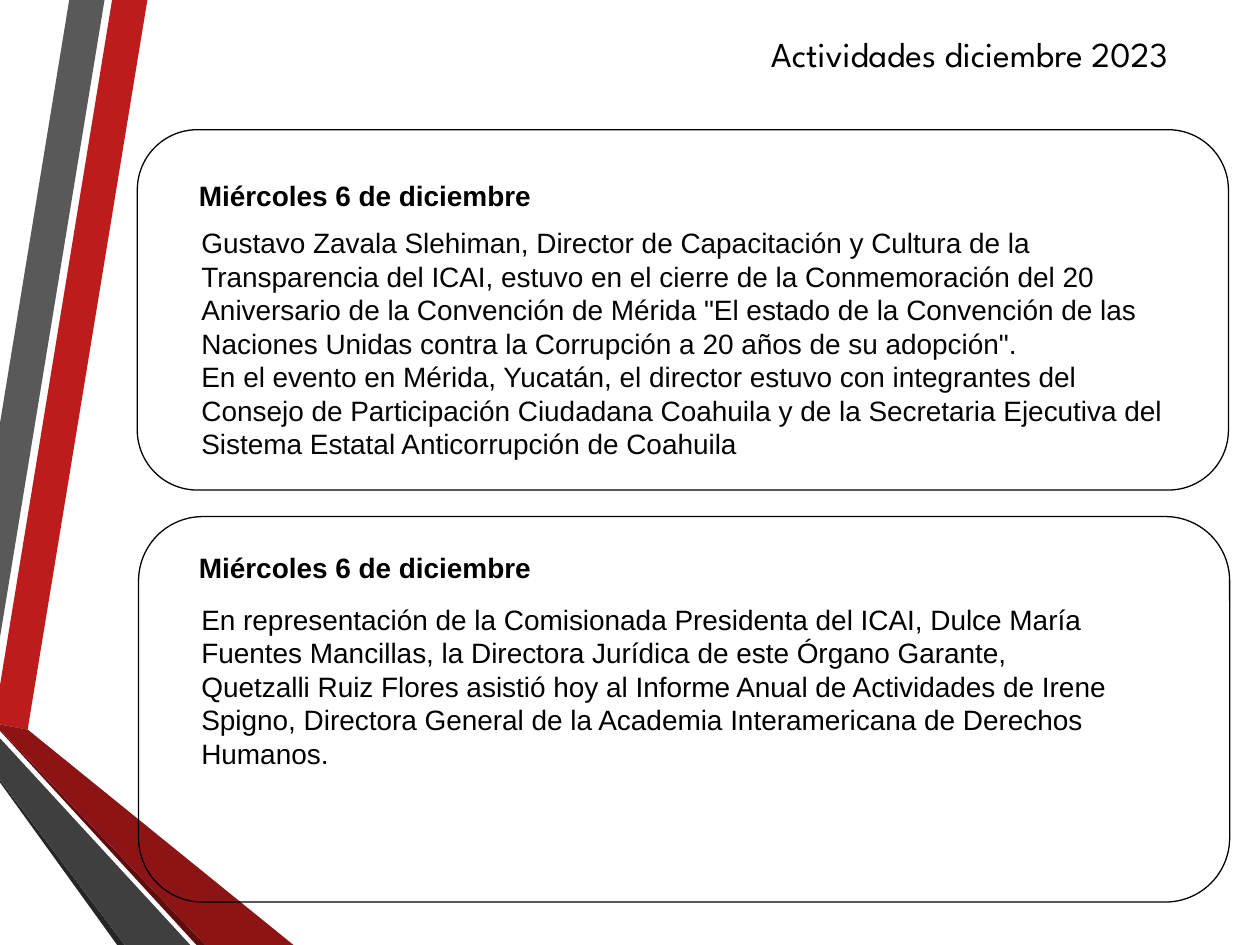
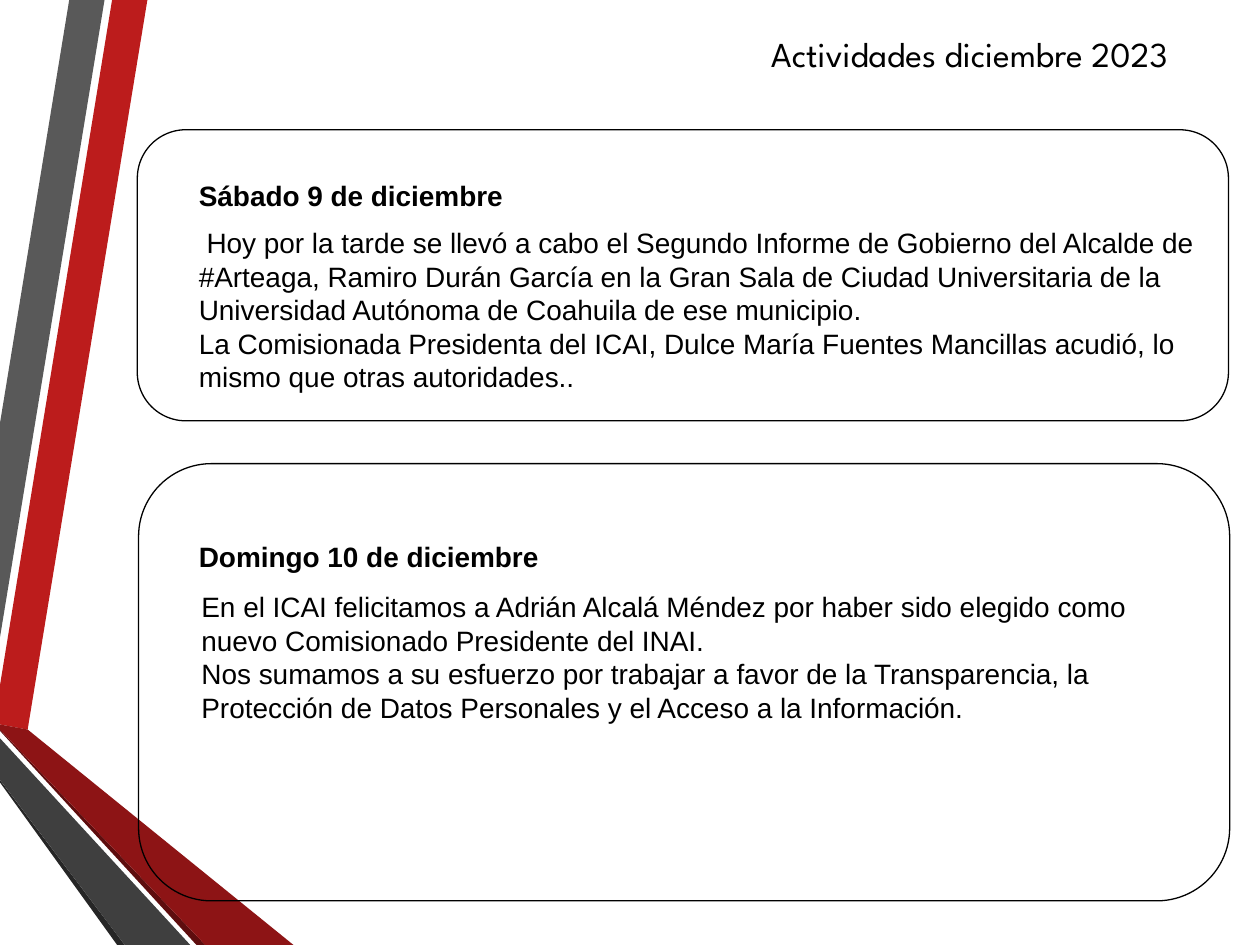
from pptx import Presentation
from pptx.dml.color import RGBColor
from pptx.enum.shapes import MSO_SHAPE as Shape
from pptx.enum.text import MSO_AUTO_SIZE as Auto, PP_ALIGN as Align
from pptx.util import Pt

PX = 9144  # EMU per px, 100 px to the inch
WIDE, HIGH = 1000, 750
BLACK = "000000"
LEFT = 148

BANDS = [
    ("BC1C1C", [(0, 544), (0, 575), (22, 579), (117, 0), (89, 0)]),
    ("595959", [(83, 0), (55, 0), (0, 336), (0, 506)]),
    ("262626", [(0, 619), (0, 621), (93, HIGH), (99, HIGH)]),
    ("5E0D0E", [(0, 579), (0, 580), (156, HIGH), (163, HIGH)]),
    ("8D1415", [(0, 579), (163, HIGH), (233, HIGH), (22, 579), (0, 575)]),
    ("3F3F3F", [(0, 619), (99, HIGH), (151, HIGH), (0, 586)]),
]

# Each card: frame (left, top, height), heading (text, top, height),
# body (left, top, width, height), body colour, paragraphs
PAGES = [
    [
        ((109, 103, 286), ("Miércoles 6 de diciembre", 137, 37),
         (150, 174, 788, 199), "050505", [
            "Gustavo Zavala Slehiman, Director de Capacitación y Cultura de la "
            "Transparencia del ICAI, estuvo en el cierre de la Conmemoración del 20 "
            "Aniversario de la Convención de Mérida \"El estado de la Convención de "
            "las Naciones Unidas contra la Corrupción a 20 años de su adopción\".",
            "En el evento en Mérida, Yucatán, el director estuvo con integrantes del "
            "Consejo de Participación Ciudadana Coahuila y de la Secretaria Ejecutiva "
            "del Sistema Estatal Anticorrupción de Coahuila"]),
        ((110, 410, 306), ("Miércoles 6 de diciembre", 432, 64),
         (150, 473, 740, 145), BLACK, [
            "En representación de la Comisionada Presidenta del ICAI, Dulce María "
            "Fuentes Mancillas, la Directora Jurídica de este Órgano Garante, "
            "Quetzalli Ruiz Flores asistió hoy al Informe Anual de Actividades de "
            "Irene Spigno, Directora General de la Academia Interamericana de "
            "Derechos Humanos."]),
    ],
    [
        ((109, 103, 231), ("Sábado 9 de diciembre", 137, 37),
         (148, 174, 824, 145), BLACK, [
            " Hoy por la tarde se llevó a cabo el Segundo Informe de Gobierno del "
            "Alcalde de #Arteaga, Ramiro Durán García en la Gran Sala de Ciudad "
            "Universitaria de la Universidad Autónoma de Coahuila de ese municipio.",
            "La Comisionada Presidenta del ICAI, Dulce María Fuentes Mancillas "
            "acudió, lo mismo que otras autoridades.."]),
        ((110, 368, 347), ("Domingo 10 de diciembre", 423, 64),
         (150, 463, 788, 118), BLACK, [
            "En el ICAI felicitamos a Adrián Alcalá Méndez por haber sido elegido "
            "como nuevo Comisionado Presidente del INAI.",
            "Nos sumamos a su esfuerzo por trabajar a favor de la Transparencia, la "
            "Protección de Datos Personales y el Acceso a la Información."]),
    ],
]


def paint(color, hue):
    color.rgb = RGBColor.from_string(hue)


def emu(*sizes):
    return [size * PX for size in sizes]


class Deck:
    def __init__(self):
        self.prs = Presentation()
        self.prs.slide_width, self.prs.slide_height = emu(WIDE, HIGH)
        self.slide = None

    def page(self):
        """Start a slide with the bands and the title."""
        self.slide = self.prs.slides.add_slide(self.prs.slide_layouts[6])
        for hue, points in BANDS:
            self.band(hue, points)
        self.text(["Actividades diciembre 2023"], (563, 21, 413, 44),
                  size=20, font="League Spartan", align=Align.CENTER)

    def band(self, hue, points):
        pen = self.slide.shapes.build_freeform(*points[0], scale=PX)
        pen.add_line_segments(points[1:], close=True)
        form = pen.convert_to_shape()
        form.shadow.inherit = False
        form.fill.solid()
        paint(form.fill.fore_color, hue)
        form.line.fill.background()

    def frame(self, left, top, high):
        form = self.slide.shapes.add_shape(
            Shape.FLOWCHART_ALTERNATE_PROCESS, *emu(left, top, 866, high))
        form.shadow.inherit = False
        form.fill.background()
        paint(form.line.color, BLACK)
        form.line.width = Pt(0.75)

    def text(self, lines, place, size=16, font="Arial", hue=BLACK,
             bold=False, align=Align.LEFT):
        box = self.slide.shapes.add_textbox(*emu(*place)).text_frame
        box.word_wrap = True
        box.auto_size = Auto.SHAPE_TO_FIT_TEXT
        box.text = "\n".join(lines)
        for para in box.paragraphs:
            para.alignment = align
            for run in para.runs:
                run.font.size, run.font.name = Pt(size), font
                run.font.bold = bold
                paint(run.font.color, hue)

    def card(self, frame, head, place, hue, lines):
        title, top, high = head
        self.text([title], (LEFT, top, 788, high), bold=True)
        self.frame(*frame)
        self.text(lines, place, hue=hue)


def main():
    deck = Deck()
    for cards in PAGES:
        deck.page()
        for card in cards:
            deck.card(*card)
    deck.prs.save("out.pptx")


if __name__ == "__main__":
    main()
